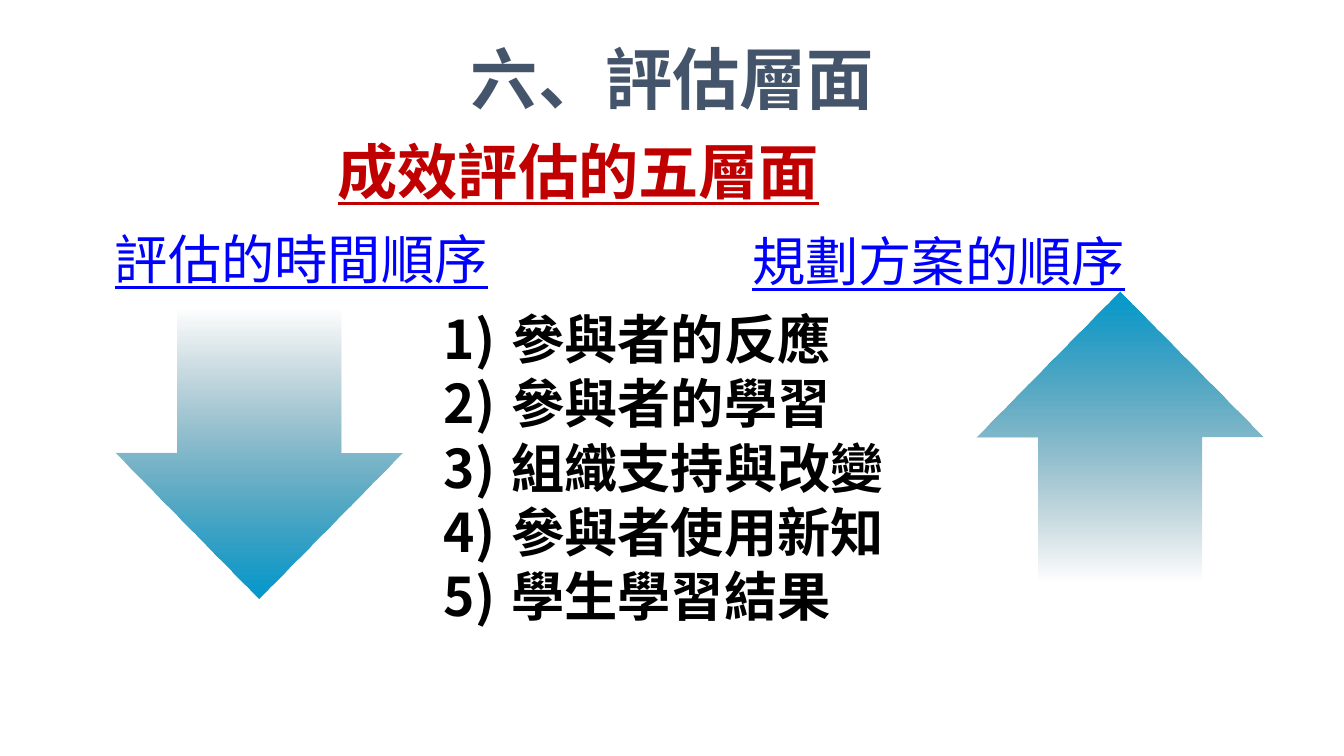
from pptx import Presentation
from pptx.dml.color import RGBColor
from pptx.enum.shapes import MSO_SHAPE
from pptx.enum.text import MSO_ANCHOR, MSO_AUTO_SIZE, PP_ALIGN
from pptx.oxml.ns import qn
from pptx.util import Emu, Pt
from lxml.etree import SubElement

PX = 9144
FONT = "Noto Sans CJK SC"
SLATE = RGBColor(0x44, 0x54, 0x6A)
RED = RGBColor(0xC0, 0x00, 0x00)
BLUE = RGBColor(0x00, 0x00, 0xFF)
BLACK = RGBColor(0x00, 0x00, 0x00)
CYAN = RGBColor(0x00, 0x99, 0xCC)
NAVY = RGBColor(0x00, 0x47, 0x5E)


def px(*lengths):
    return [Emu(length * PX) for length in lengths]


def write(box, lines, size, color, bold=False, underline=False,
          align=PP_ALIGN.LEFT, numbered=False):
    frame = box.text_frame
    frame.word_wrap = True
    frame.auto_size = MSO_AUTO_SIZE.NONE
    frame.vertical_anchor = MSO_ANCHOR.TOP
    frame.margin_left, frame.margin_right = px(12, 12)
    frame.margin_top, frame.margin_bottom = px(6, 6)
    for index, line in enumerate(lines):
        para = frame.paragraphs[0] if index == 0 else frame.add_paragraph()
        para.alignment = align
        para.space_before = Pt(0)
        para.line_spacing = Pt(round(size * 1.21))
        if numbered:
            props = para._p.get_or_add_pPr()
            props.set("marL", str(67 * PX))
            props.set("indent", str(-67 * PX))
            SubElement(props, qn("a:buFont"), typeface=FONT)
            SubElement(props, qn("a:buAutoNum"), type="arabicParenR")
        span = para.add_run()
        span.text = line
        span.font.name = FONT
        span.font.size = Pt(size)
        span.font.bold = bold
        span.font.underline = underline
        span.font.color.rgb = color
        SubElement(span._r.get_or_add_rPr(), qn("a:ea"), typeface=FONT)


deck = Presentation()
deck.slide_width, deck.slide_height = px(1333, 750)
page = deck.slides.add_slide(deck.slide_layouts[1])

title = page.shapes.title
title.left, title.top, title.width, title.height = px(67, 30, 1200, 125)
write(title, ["六、評估層面"], 48, SLATE, bold=True, align=PP_ALIGN.CENTER)

levels = page.placeholders[1]
levels.left, levels.top, levels.width, levels.height = px(428, 297, 533, 332)
write(levels, ["參與者的反應", "參與者的學習", "組織支持與改變", "參與者使用新知", "學生學習結果"],
      38, BLACK, bold=True, numbered=True)

subtitle = page.shapes.add_textbox(*px(115, 127, 917, 84))
write(subtitle, ["成效評估的五層面"], 43, RED, bold=True, underline=True,
      align=PP_ALIGN.CENTER)

for label, left, top, width in (
    ("評估的時間順序", 102, 218, 565),
    ("規劃方案的順序", 734, 220, 594),
):
    box = page.shapes.add_textbox(*px(left, top, width, 76))
    write(box, [label], 38, BLUE, underline=True)

for left, top, rotation in ((115, 305, 180), (969, 289, 0)):
    arrow = page.shapes.add_shape(MSO_SHAPE.UP_ARROW, *px(left, top, 284, 289))
    arrow.rotation = rotation
    arrow.shadow.inherit = False
    arrow.adjustments[0] = 0.57
    arrow.adjustments[1] = 0.51
    arrow.line.fill.background()
    arrow.fill.gradient()
    arrow.fill.gradient_angle = 270
    for stop, color in zip(arrow.fill.gradient_stops, (CYAN, NAVY)):
        stop.color.rgb = color
    faded = arrow._element.spPr.findall(".//" + qn("a:srgbClr"))[-1]
    SubElement(faded, qn("a:alpha"), val="0")

deck.save("out.pptx")
